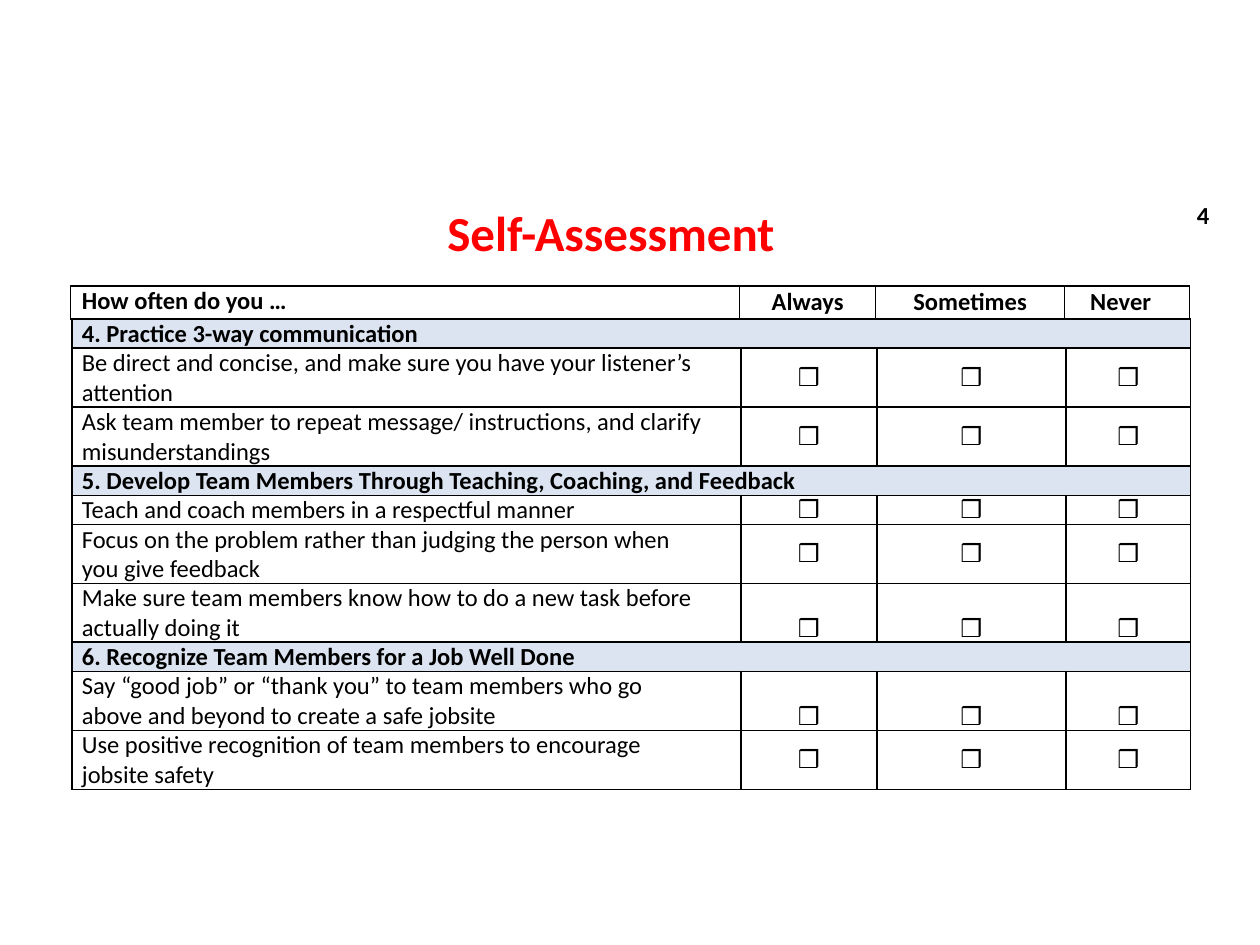
"""Build the self-assessment checklist slide with a header and three question sections."""
from lxml import etree
from pptx import Presentation, util as u
from pptx.dml.color import RGBColor
from pptx.enum import text as t
from pptx.oxml import ns

BLACK = RGBColor(0, 0, 0)
RED = RGBColor(0xFF, 0, 0)
PALE_BLUE = RGBColor(0xDB, 0xE4, 0xF0)
COLUMNS = [5.31, 1.08, 1.5, 0.99]
LINE = 1.4 / 6
MIDDLE, BOTTOM, TOP = t.MSO_ANCHOR.MIDDLE, t.MSO_ANCHOR.BOTTOM, t.MSO_ANCHOR.TOP
LEFT, CENTER = t.PP_ALIGN.LEFT, t.PP_ALIGN.CENTER

SECTIONS = [
    ("4. Practice 3-way communication", [
        ("Be direct and concise, and make sure you have your listener’s attention", 2, MIDDLE),
        ("Ask team member to repeat message/ instructions, and clarify misunderstandings", 2, MIDDLE),
    ]),
    ("5. Develop Team Members Through Teaching, Coaching, and Feedback", [
        ("Teach and coach members in a respectful manner", 1, MIDDLE),
        ("Focus on the problem rather than judging the person when you give feedback", 2, MIDDLE),
        ("Make sure team members know how to do a new task before actually doing it", 2, BOTTOM),
    ]),
    ("6. Recognize Team Members for a Job Well Done", [
        ("Say “good job” or “thank you” to team members who go above and beyond to create a safe jobsite", 2, BOTTOM),
        ("Use positive recognition of team members to encourage jobsite safety", 2, MIDDLE),
    ]),
]


def add_grid(left, top, heights):
    """Add a black-ruled table without fills or cell margins."""
    grid = slide.shapes.add_table(len(heights), len(COLUMNS), u.Inches(left), u.Inches(top),
                                  u.Inches(sum(COLUMNS)), u.Inches(sum(heights))).table
    grid.first_row = grid.horz_banding = False
    for column, width in zip(grid.columns, COLUMNS):
        column.width = u.Inches(width)
    for row, height in zip(grid.rows, heights):
        row.height = u.Inches(height)
    for cell in grid.iter_cells():
        cell.margin_left = cell.margin_right = cell.margin_top = cell.margin_bottom = 0
        properties = cell._tc.get_or_add_tcPr()
        for side in ("a:lnL", "a:lnR", "a:lnT", "a:lnB"):
            border = etree.SubElement(properties, ns.qn(side), w=str(u.Pt(1)))
            ink = etree.SubElement(border, ns.qn("a:solidFill"))
            etree.SubElement(ink, ns.qn("a:srgbClr"), val=str(BLACK))
        cell.fill.background()
    return grid


def write(frame, words, font="Calibri", size=14, bold=False, color=BLACK, align=LEFT):
    """Fill a text frame with one formatted paragraph."""
    frame.text = words
    paragraph = frame.paragraphs[0]
    paragraph.alignment = align
    paragraph.font.name, paragraph.font.size = font, u.Pt(size)
    paragraph.font.bold, paragraph.font.color.rgb = bold, color


deck = Presentation()
deck.slide_width, deck.slide_height = u.Inches(10), u.Inches(7.5)
slide = deck.slides.add_slide(deck.slide_layouts[5])

title = slide.shapes.title
title.left, title.top = u.Inches(3.45), u.Inches(1.56)
title.width, title.height = u.Inches(3.11), u.Inches(0.57)
write(title.text_frame, "Self-Assessment", size=28, bold=True, color=RED)
title.text_frame.vertical_anchor = TOP

page_number = slide.shapes.add_textbox(u.Inches(9.4), u.Inches(1.54), u.Inches(0.5), u.Inches(0.34))
page_number.text_frame.word_wrap = True
write(page_number.text_frame, "4", bold=True)

header = add_grid(0.56, 2.27, [0.26])
for index, label in enumerate(["How often do you …", "Always", "Sometimes", "Never"]):
    cell = header.cell(0, index)
    write(cell.text_frame, label, bold=True, align=CENTER if index else LEFT)
    cell.vertical_anchor = MIDDLE if index else TOP
header.cell(0, 0).margin_left = u.Inches(0.09)
header.cell(0, 3).margin_right = u.Inches(0.1)

section_top = 2.53
for heading, questions in SECTIONS:
    heights = [LINE] + [lines * LINE for _, lines, _ in questions]
    section = add_grid(0.57, section_top, heights)
    section_top += sum(heights)

    band = section.cell(0, 0)
    band.merge(section.cell(0, 3))
    band.fill.solid()
    band.fill.fore_color.rgb = PALE_BLUE
    band.margin_left = u.Inches(0.08)
    band.vertical_anchor = MIDDLE
    write(band.text_frame, heading, bold=True)

    for row, (question, _, box_anchor) in enumerate(questions, start=1):
        prompt = section.cell(row, 0)
        prompt.margin_left, prompt.margin_right = u.Inches(0.08), u.Inches(0.3)
        prompt.vertical_anchor = MIDDLE
        write(prompt.text_frame, question)
        for column in range(1, len(COLUMNS)):
            checkbox = section.cell(row, column)
            checkbox.vertical_anchor = box_anchor
            write(checkbox.text_frame, "❒", font="Arial", align=CENTER)

deck.save("out.pptx")
